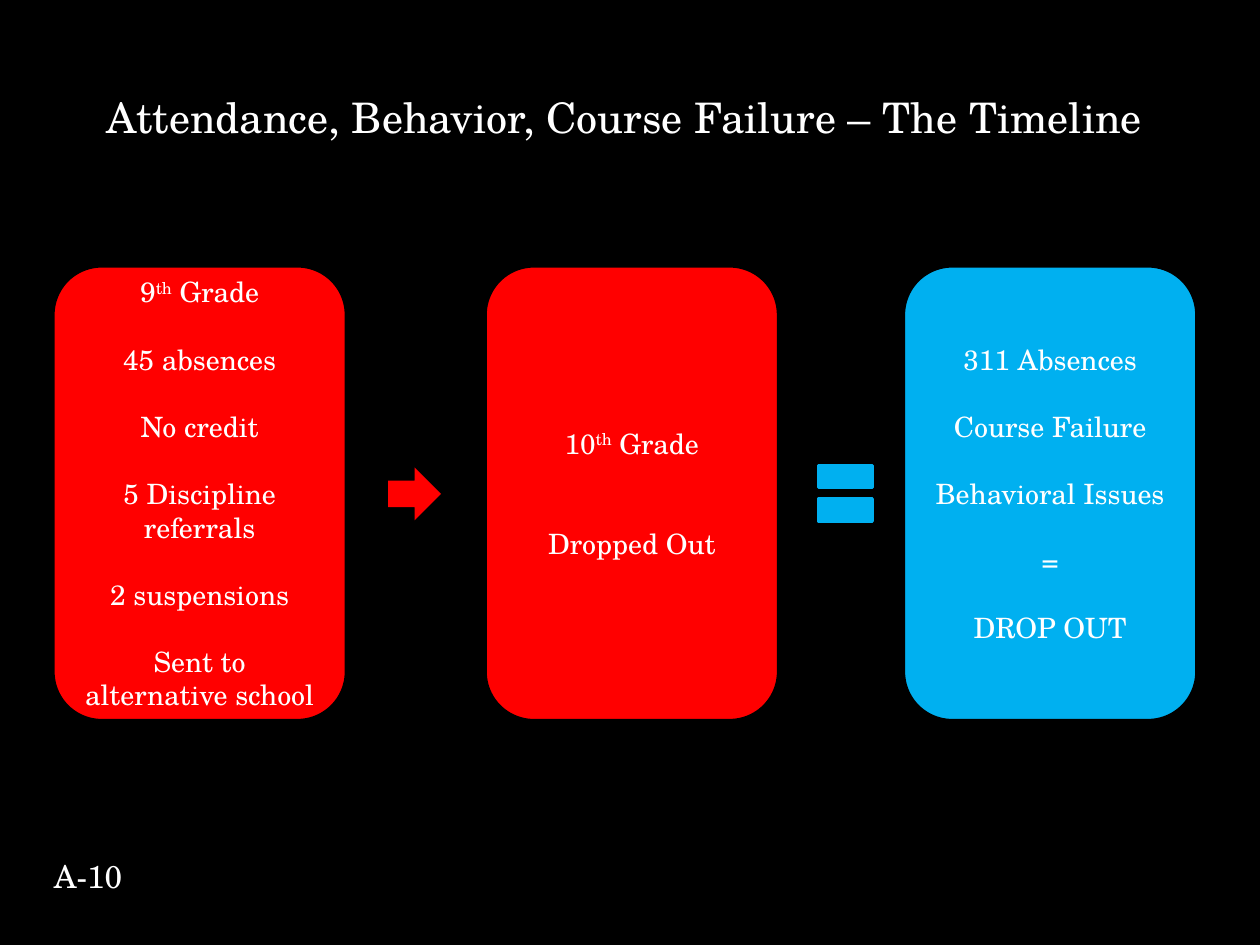
"""Build the attendance, behavior and course failure timeline slide."""
import pptx
import pptx.dml.color
import pptx.enum.shapes
import pptx.enum.text
import pptx.util
from pptx.util import Inches

BLACK = pptx.dml.color.RGBColor(0x00, 0x00, 0x00)
WHITE = pptx.dml.color.RGBColor(0xFF, 0xFF, 0xFF)
RED = pptx.dml.color.RGBColor(0xFF, 0x00, 0x00)
BLUE = pptx.dml.color.RGBColor(0x00, 0xB0, 0xF0)
FONT = "TeX Gyre Schola"
SHAPES = pptx.enum.shapes.MSO_SHAPE
CENTER = pptx.enum.text.PP_ALIGN.CENTER
LEFT = pptx.enum.text.PP_ALIGN.LEFT
MIDDLE = pptx.enum.text.MSO_ANCHOR.MIDDLE
TOP = pptx.enum.text.MSO_ANCHOR.TOP

CARD_TOP, CARD_WIDTH, CARD_HEIGHT = 2.11, 2.33, 3.61
LINE_HEIGHT = 19.2
CARDS = [
    (0.42, RED, 1, ["9^th^ Grade", "45 absences", "No credit", "5 Discipline referrals",
                    "2 suspensions", "Sent to alternative school"]),
    (3.85, RED, 2, ["10^th^ Grade", "Dropped Out"]),
    (7.17, BLUE, 1, ["311 Absences", "Course Failure", "Behavioral Issues", "=", "DROP OUT"]),
]


def write_text(box, lines, size=16, align=CENTER, anchor=MIDDLE, gap=0):
    """Write one paragraph per line, raising the parts between carets."""
    frame = box.text_frame
    frame.word_wrap = True
    frame.vertical_anchor = anchor
    for index, line in enumerate(lines):
        para = frame.add_paragraph() if index else frame.paragraphs[0]
        para.alignment = align
        para.space_before = pptx.util.Pt(gap if index else 0)
        for part, text in enumerate(line.split("^")):
            span = para.add_run()
            span.text = text
            span.font.name = FONT
            span.font.size = pptx.util.Pt(size)
            span.font.color.rgb = WHITE
            if part % 2:
                span.font._element.set("baseline", "30000")


def add_label(page, left, top, width, height, text, **text_format):
    """Add a text box with one line of text."""
    box = page.shapes.add_textbox(Inches(left), Inches(top), Inches(width), Inches(height))
    write_text(box, [text], **text_format)


def add_figure(page, kind, left, top, width, height, fill, outline=None):
    """Add a flat filled preset shape, outlined if a colour is given."""
    shape = page.shapes.add_shape(
        kind, Inches(left), Inches(top), Inches(width), Inches(height))
    shape.shadow.inherit = False
    shape.fill.solid()
    shape.fill.fore_color.rgb = fill
    if outline is None:
        shape.line.fill.background()
    else:
        shape.line.color.rgb = outline
        shape.line.width = pptx.util.Pt(2)
    return shape


def add_card(page, left, fill, blank_lines, lines):
    """Add a rounded card with evenly spaced lines."""
    card = add_figure(page, SHAPES.ROUNDED_RECTANGLE, left, CARD_TOP,
                      CARD_WIDTH, CARD_HEIGHT, fill, BLACK)
    write_text(card, lines, gap=blank_lines * LINE_HEIGHT)


def main():
    """Build and save the deck."""
    deck = pptx.Presentation()
    deck.slide_width, deck.slide_height = Inches(10), Inches(7.5)
    page = deck.slides.add_slide(deck.slide_layouts[6])
    page.background.fill.solid()
    page.background.fill.fore_color.rgb = BLACK

    add_label(page, 0.5, 0.3, 9, 1.25,
              "Attendance, Behavior, Course Failure – The Timeline ", size=24)
    for card in CARDS:
        add_card(page, *card)
    add_figure(page, SHAPES.RIGHT_ARROW, 3.08, 3.71, 0.42, 0.42, RED)
    add_figure(page, SHAPES.MATH_EQUAL, 6.42, 3.54, 0.58, 0.75, BLUE, BLUE)
    add_label(page, 0.33, 6.75, 0.75, 0.4, "A-10", size=18, align=LEFT, anchor=TOP)
    deck.save("out.pptx")


if __name__ == "__main__":
    main()
